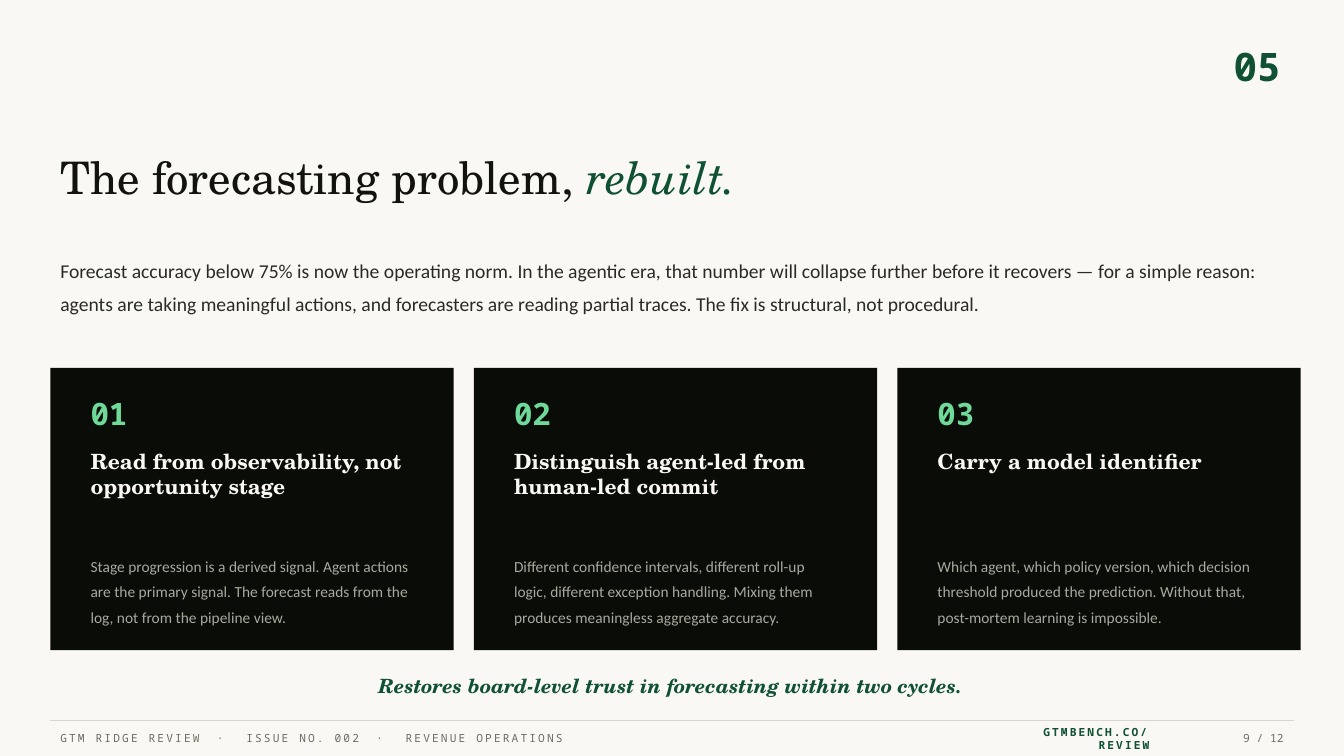
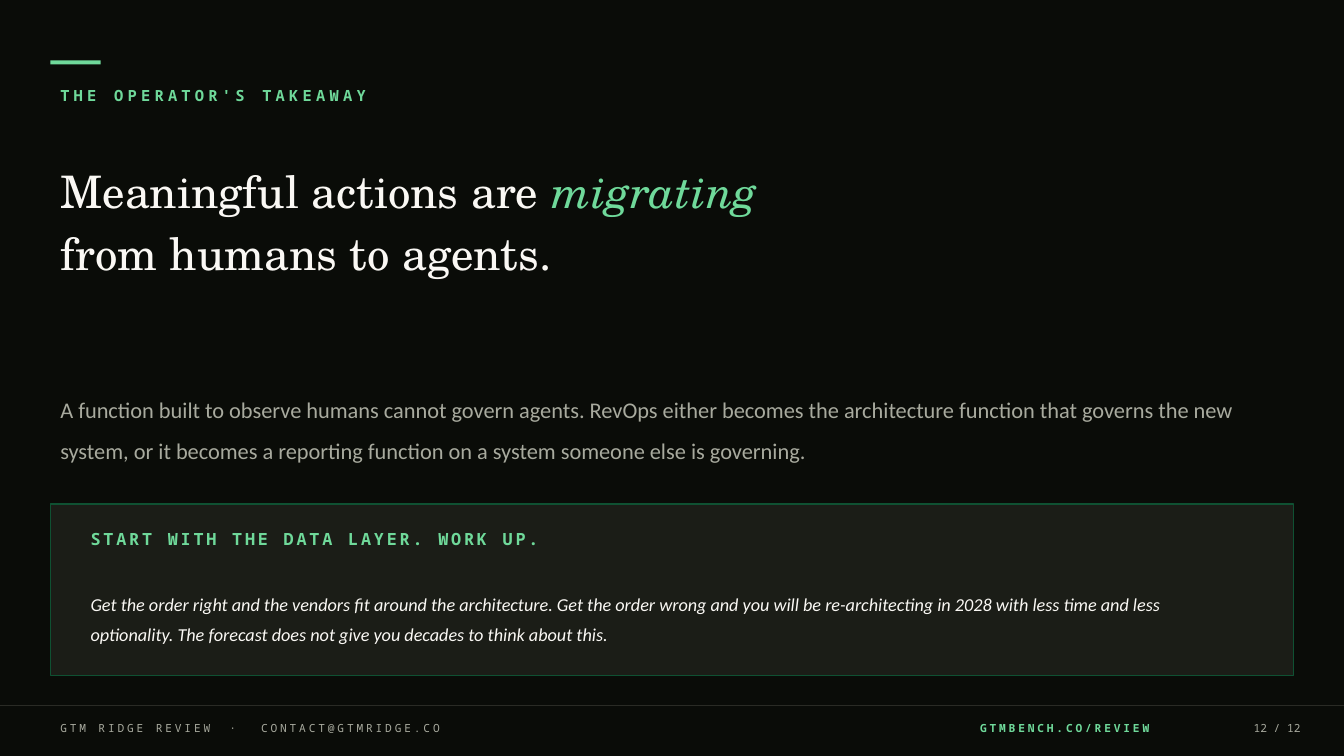
from pptx import Presentation
from pptx.dml.color import RGBColor
from pptx.enum import shapes, text
from pptx.oxml.ns import qn
from pptx.util import Inches, Pt
from lxml import etree


class Theme:
    paper, ink, body = "FAF8F4", "12130F", "2A2B25"
    night, panel = "0A0C08", "1B1D17"
    green, mint = "0F5132", "6FD99A"
    mist, grey, rule = "A8AA9E", "6B6D63", "D9D6CF"
    serif, sans, mono = "TeX Gyre Schola", "Calibri", "Noto Sans Mono"
    title, page_mark, card_number = 32, 28, 22
    lead, closing_lead, quote = 14, 16, 13
    card_title, card_body, closer = 15, 11, 14
    eyebrow, panel_title, footer = 11, 12, 8


LEFT, CENTER, RIGHT = text.PP_ALIGN.LEFT, text.PP_ALIGN.CENTER, text.PP_ALIGN.RIGHT
MIDDLE, TOP = text.MSO_ANCHOR.MIDDLE, text.MSO_ANCHOR.TOP


def add_text(s, box, content, size, font, color, bold=False, italic=False, align=LEFT,
             anchor=MIDDLE, leading=None, spacing=None, accent=None, gap=None):
    """Add one paragraph per line; parts between asterisks take the accent or the gap."""
    tf = s.shapes.add_textbox(*map(Inches, box)).text_frame
    tf.word_wrap = True
    tf.vertical_anchor = anchor
    for i, line in enumerate(content.split("\n")):
        p = tf.add_paragraph() if i else tf.paragraphs[0]
        p.alignment = align
        if leading:
            p.line_spacing = leading
        p.font.size, p.font.name = Pt(size), font
        p.font.bold, p.font.italic = bold, italic
        p.font.color.rgb = RGBColor.from_string(color)
        if spacing:
            p._p.pPr.find(qn("a:defRPr")).set("spc", str(round(spacing * 100)))
        for j, part in enumerate(line.split("*")):
            if not part:
                continue
            r = p.add_run()
            r.text = part
            if j % 2 and accent:
                r.font.italic = True
                r.font.color.rgb = RGBColor.from_string(accent)
            if j % 2 and gap:
                r._r.get_or_add_rPr().set("spc", str(round(gap * 100)))


def add_rect(s, box, fill, line=None):
    sp = s.shapes.add_shape(shapes.MSO_SHAPE.RECTANGLE, *map(Inches, box))
    sp.shadow.inherit = False
    sp.fill.solid()
    sp.fill.fore_color.rgb = RGBColor.from_string(fill)
    if line:
        sp.line.color.rgb = RGBColor.from_string(line)
        sp.line.width = Pt(1)
    else:
        sp.line.fill.background()


prs = Presentation()
prs.slide_width, prs.slide_height = Inches(13.33), Inches(7.5)
forecast, takeaway = (prs.slides.add_slide(prs.slide_layouts[6]) for _ in range(2))
for s, color in ((forecast, Theme.paper), (takeaway, Theme.night)):
    s.background.fill.solid()
    s.background.fill.fore_color.rgb = RGBColor.from_string(color)

# Forecasting slide
s = forecast
add_text(s, (11.5, 0.4, 1.3, 0.5), "05", Theme.page_mark, Theme.mono, Theme.green,
         bold=True, align=RIGHT)
add_text(s, (0.5, 1.4, 12.3, 0.7), "The forecasting problem, *rebuilt.*",
         Theme.title, Theme.serif, Theme.ink, accent=Theme.green)
add_text(s, (0.5, 2.3, 12.3, 1),
         "Forecast accuracy below 75% is now the operating norm. In the agentic era, that "
         "number will collapse further before it recovers — for a simple reason: agents are "
         "taking meaningful actions, and forecasters are reading partial traces. The fix is "
         "structural, not procedural.",
         Theme.lead, Theme.sans, Theme.body, leading=1.4)

cards = [
    ("Read from observability, not opportunity stage",
     "Stage progression is a derived signal. Agent actions are the primary signal. "
     "The forecast reads from the log, not from the pipeline view."),
    ("Distinguish agent-led from human-led commit",
     "Different confidence intervals, different roll-up logic, different exception "
     "handling. Mixing them produces meaningless aggregate accuracy."),
    ("Carry a model identifier",
     "Which agent, which policy version, which decision threshold produced the "
     "prediction. Without that, post-mortem learning is impossible."),
]
card_width, card_gap, card_pad = 4, 0.2, 0.3
for i, (heading, detail) in enumerate(cards):
    x = 0.5 + i * (card_width + card_gap)
    inner_x, inner_width = x + card_pad, card_width - 2 * card_pad
    add_rect(s, (x, 3.65, card_width, 2.8), Theme.night)
    add_text(s, (inner_x, 3.85, 1, 0.5), f"{i + 1:02}", Theme.card_number, Theme.mono,
             Theme.mint, bold=True)
    add_text(s, (inner_x, 4.4, inner_width, 0.9), heading, Theme.card_title, Theme.serif,
             Theme.paper, bold=True, anchor=TOP)
    add_text(s, (inner_x, 5.4, inner_width, 1), detail, Theme.card_body, Theme.sans,
             Theme.mist, anchor=TOP, leading=1.4)

add_text(s, (0.5, 6.65, 12.3, 0.3),
         "Restores board-level trust in forecasting within two cycles.",
         Theme.closer, Theme.serif, Theme.green, bold=True, italic=True, align=CENTER)

# Takeaway slide
s = takeaway
add_rect(s, (0.5, 0.6, 0.5, 0.04), Theme.mint)
add_text(s, (0.5, 0.8, 12, 0.3), "THE OPERATOR'S TAKEAWAY", Theme.eyebrow, Theme.mono,
         Theme.mint, bold=True, spacing=3)
add_text(s, (0.5, 1.5, 12.3, 1.8), "Meaningful actions are *migrating*\nfrom humans to agents.",
         Theme.title, Theme.serif, Theme.paper, anchor=TOP, leading=1.15, accent=Theme.mint)
add_text(s, (0.5, 3.5, 12.3, 1.4),
         "A function built to observe humans cannot govern agents. RevOps either becomes the "
         "architecture function that governs the new system, or it becomes a reporting "
         "function on a system someone else is governing.",
         Theme.closing_lead, Theme.sans, Theme.mist, leading=1.5)
add_rect(s, (0.5, 5, 12.33, 1.7), Theme.panel, Theme.green)
add_text(s, (0.8, 5.15, 11.5, 0.4), "START WITH THE DATA LAYER. WORK UP.", Theme.panel_title,
         Theme.mono, Theme.mint, bold=True, spacing=2)
add_text(s, (0.8, 5.6, 11.5, 1),
         "Get the order right and the vendors fit around the architecture. Get the order wrong "
         "and you will be re-architecting in 2028 with less time and less optionality. The "
         "forecast does not give you decades to think about this.",
         Theme.quote, Theme.sans, Theme.paper, italic=True, leading=1.4)

# Footers: slide, rule (x1, x2, y, colour), text top, spacing, dot gap, colours,
# credit, address (left, width), page (left, width, number)
footers = [
    (forecast, (0.5, 12.83, 7.15, Theme.rule), 7.2, 1.5, 5.7, Theme.grey, Theme.green,
     "GTM RIDGE REVIEW* · *ISSUE NO. 002* · *REVENUE OPERATIONS",
     (10, 1.5), (11.5, 1.33, "9 / 12")),
    (takeaway, (0, 13.33, 7, Theme.body), 7.1, 2, 6.5, Theme.mist, Theme.mint,
     "GTM RIDGE REVIEW* · *CONTACT@GTMRIDGE.CO",
     (8, 3.5), (11.7, 1.3, "12 / 12")),
]
for s, rule, y, spacing, gap, color, highlight, credit, address, page in footers:
    x1, x2, rule_y, rule_color = rule
    line = s.shapes.add_connector(shapes.MSO_CONNECTOR.STRAIGHT, Inches(x1), Inches(rule_y),
                                  Inches(x2), Inches(rule_y))
    line.line.color.rgb = RGBColor.from_string(rule_color)
    line.line.width = Pt(0.75)
    etree.SubElement(line._element.spPr, qn("a:effectLst"))
    add_text(s, (0.5, y, 8, 0.25), credit, Theme.footer, Theme.mono, color,
             spacing=spacing, gap=gap)
    add_text(s, (address[0], y, address[1], 0.25), "GTMBENCH.CO/REVIEW", Theme.footer,
             Theme.mono, highlight, bold=True, align=RIGHT, spacing=spacing)
    add_text(s, (page[0], y, page[1], 0.25), page[2], Theme.footer, Theme.mono, color,
             align=RIGHT)

prs.save("out.pptx")
